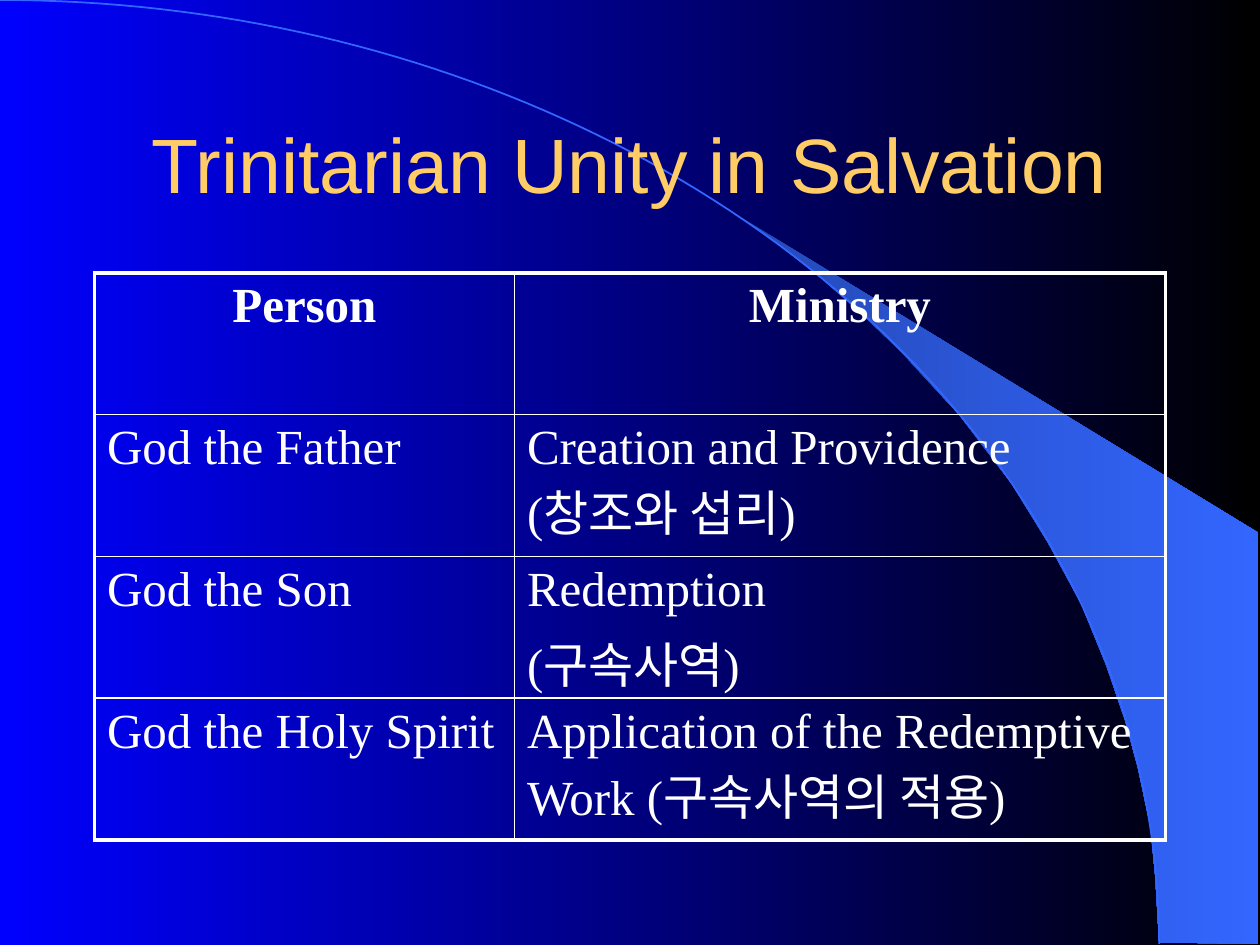
"""Build the slide on Trinitarian unity in salvation."""
from math import cos, pi, sin
from typing import NamedTuple

from lxml.etree import SubElement
from pptx import Presentation
from pptx.dml.color import RGBColor
from pptx.dml.fill import FillFormat
from pptx.enum.text import MSO_ANCHOR as Anchor, PP_ALIGN as Align
from pptx.oxml.ns import qn
from pptx.shapes.autoshape import Shape
from pptx.slide import Slide
from pptx.table import _Cell as Cell
from pptx.util import Pt

BLUE = RGBColor(0x00, 0x00, 0xFF)
BLACK = RGBColor(0x00, 0x00, 0x00)
DEEP_BLUE = RGBColor(0x24, 0x49, 0xB6)
BRIGHT_BLUE = RGBColor(0x33, 0x66, 0xFF)
GOLD = RGBColor(0xFF, 0xCC, 0x66)
WHITE = RGBColor(0xFF, 0xFF, 0xFF)

WIDTH, HEIGHT = 720, 540
ARC_WIDTH, ARC_HEIGHT, ARC_STEPS = 662.4, 539.3, 90
OUTER_BORDER, INNER_BORDER = 2.25, 1
COLUMN_WIDTHS = (240, 372)
ROW_HEIGHT = 81

BEAM = [
    (662.4, 538.6), (719.3, 539.3), (719.3, 304.6), (424.1, 124.6),
    (449.3, 143.3), (470.2, 159.8), (493.2, 180), (515.5, 201.6),
    (548.6, 237.6), (578.2, 276.5), (599, 310.3), (617.8, 344.9),
    (632.2, 380.2), (643, 411.8), (650.2, 438.5), (657.4, 472.3),
    (660.2, 501.1),
]


class Role(NamedTuple):
    person: str
    ministry: str
    heading: bool = False


ROLES = [
    Role("Person", "Ministry", heading=True),
    Role("God the Father", "Creation and Providence (창조와 섭리)"),
    Role("God the Son", "Redemption\n(구속사역)"),
    Role("God the Holy Spirit", "Application of the Redemptive Work (구속사역의 적용)"),
]


def shade(fill: FillFormat, start: RGBColor, end: RGBColor) -> None:
    fill.gradient()
    fill.gradient_angle = 0
    for stop, color in zip(fill.gradient_stops, (start, end)):
        stop.color.rgb = color


def draw_outline(slide: Slide, points: list[tuple[float, float]], close: bool) -> Shape:
    builder = slide.shapes.build_freeform(
        Pt(points[0][0]), Pt(points[0][1]), scale=1.0)
    builder.add_line_segments([(Pt(x), Pt(y)) for x, y in points[1:]], close=close)
    outline = builder.convert_to_shape()
    outline.shadow.inherit = False
    return outline


def draw_backdrop(slide: Slide) -> None:
    shade(slide.background.fill, BLUE, BLACK)
    beam = draw_outline(slide, BEAM, close=True)
    shade(beam.fill, DEEP_BLUE, BRIGHT_BLUE)
    beam.line.fill.background()

    angles = [pi / 2 * step / ARC_STEPS for step in range(ARC_STEPS + 1)]
    horizon = draw_outline(
        slide,
        [(ARC_WIDTH * sin(a), ARC_HEIGHT * (1 - cos(a))) for a in angles],
        close=False)
    horizon.fill.background()
    horizon.line.color.rgb = BRIGHT_BLUE
    horizon.line.width = Pt(1)


def draw_title(slide: Slide, wording: str) -> None:
    frame = slide.shapes.add_textbox(Pt(54), Pt(48), Pt(612), Pt(90)).text_frame
    frame.word_wrap = True
    frame.vertical_anchor = Anchor.MIDDLE
    title = frame.paragraphs[0]
    title.text = wording
    title.alignment = Align.CENTER
    title.font.name, title.font.size = "Arial", Pt(44)
    title.font.color.rgb = GOLD


def set_borders(cell: Cell, outer_sides: dict[str, bool]) -> None:
    properties = cell._tc.get_or_add_tcPr()
    for position, (side, is_outer) in enumerate(outer_sides.items()):
        width = Pt(OUTER_BORDER if is_outer else INNER_BORDER)
        border = SubElement(properties, qn(f"a:ln{side}"), w=str(int(width)))
        solid = SubElement(border, qn("a:solidFill"))
        SubElement(solid, qn("a:srgbClr"), val=str(WHITE))
        properties.insert(position, border)


def write_cell(cell: Cell, wording: str, heading: bool) -> None:
    cell.fill.background()
    cell.text = wording
    for index, paragraph in enumerate(cell.text_frame.paragraphs):
        paragraph.alignment = Align.CENTER if heading else Align.LEFT
        paragraph.space_before = Pt(5.6 if index else 0)
        font = paragraph.font
        font.name, font.size, font.bold = "Times New Roman", Pt(28), heading
        font.color.rgb = WHITE


def draw_roles(slide: Slide, roles: list[Role]) -> None:
    table = slide.shapes.add_table(
        len(roles), len(COLUMN_WIDTHS), Pt(54), Pt(156),
        Pt(sum(COLUMN_WIDTHS)), Pt(ROW_HEIGHT * len(roles))).table
    table.first_row = table.horz_banding = False
    for column, width in zip(table.columns, COLUMN_WIDTHS):
        column.width = Pt(width)
    for r, role in enumerate(roles):
        table.rows[r].height = Pt(ROW_HEIGHT)
        for c, wording in enumerate((role.person, role.ministry)):
            cell = table.cell(r, c)
            write_cell(cell, wording, role.heading)
            set_borders(cell, {
                "L": c == 0, "R": c == len(COLUMN_WIDTHS) - 1,
                "T": r == 0, "B": r == len(roles) - 1})


def main() -> None:
    deck = Presentation()
    deck.slide_width, deck.slide_height = Pt(WIDTH), Pt(HEIGHT)
    slide = deck.slides.add_slide(deck.slide_layouts[6])
    draw_backdrop(slide)
    draw_title(slide, "Trinitarian Unity in Salvation")
    draw_roles(slide, ROLES)
    deck.save("out.pptx")


if __name__ == "__main__":
    main()
